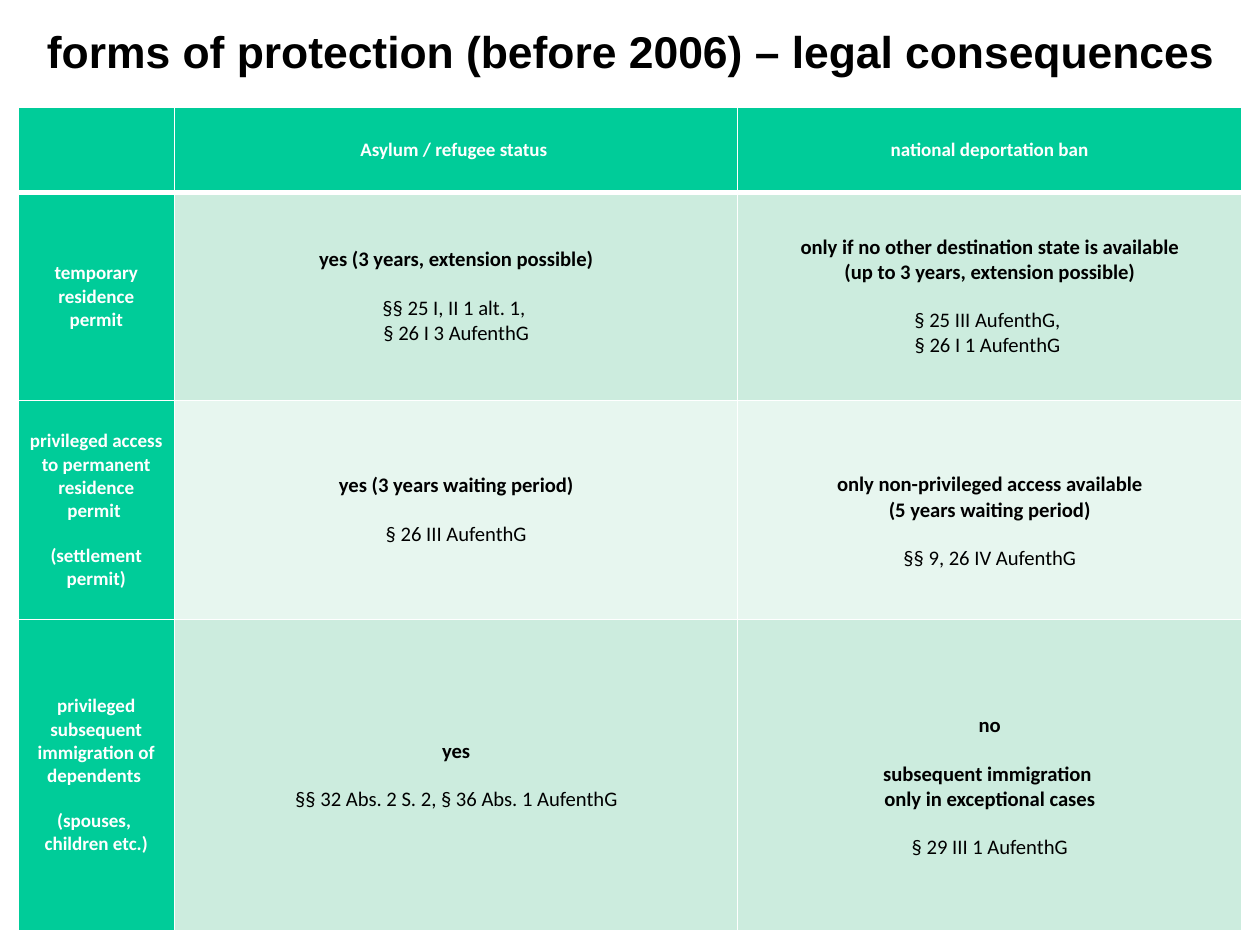
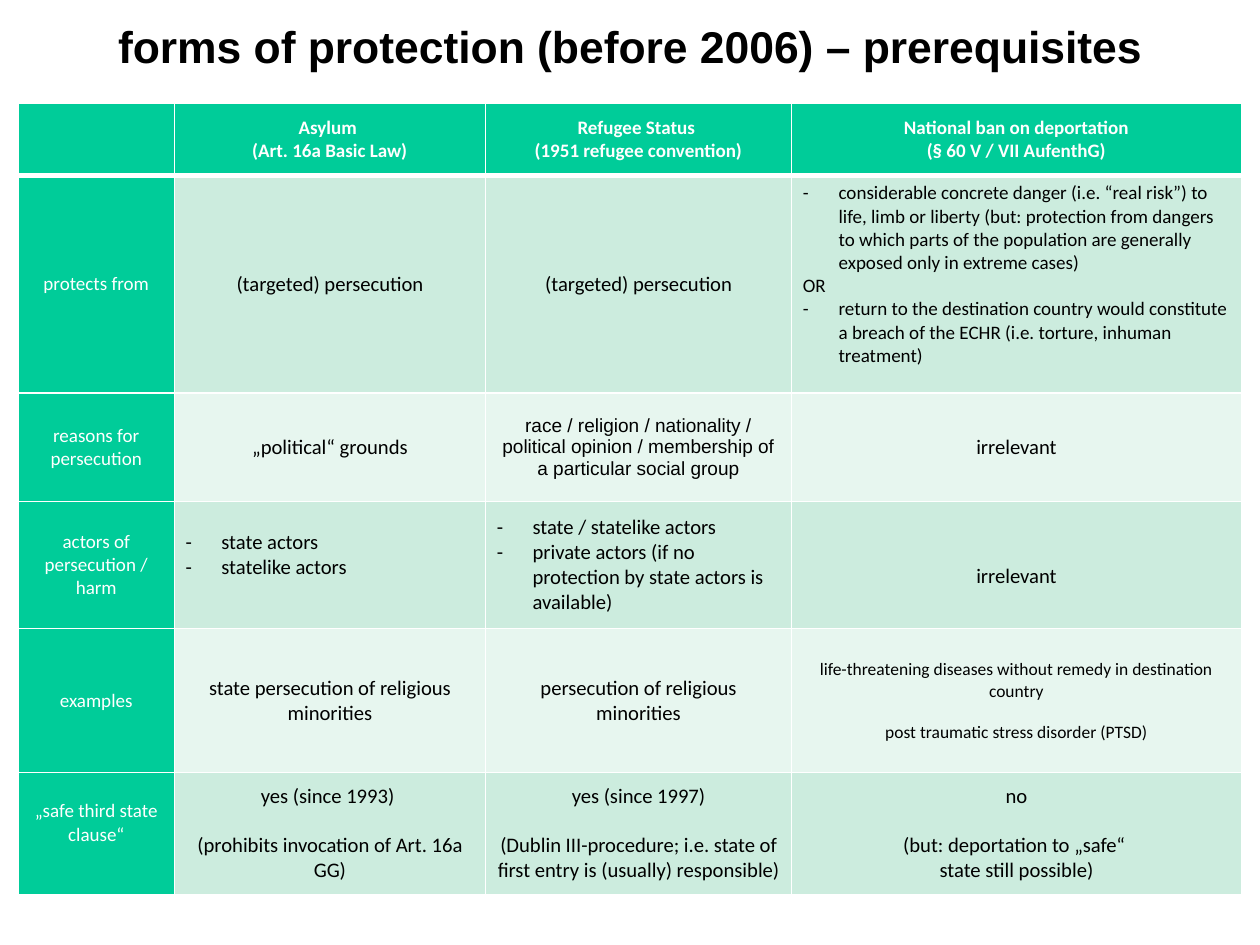
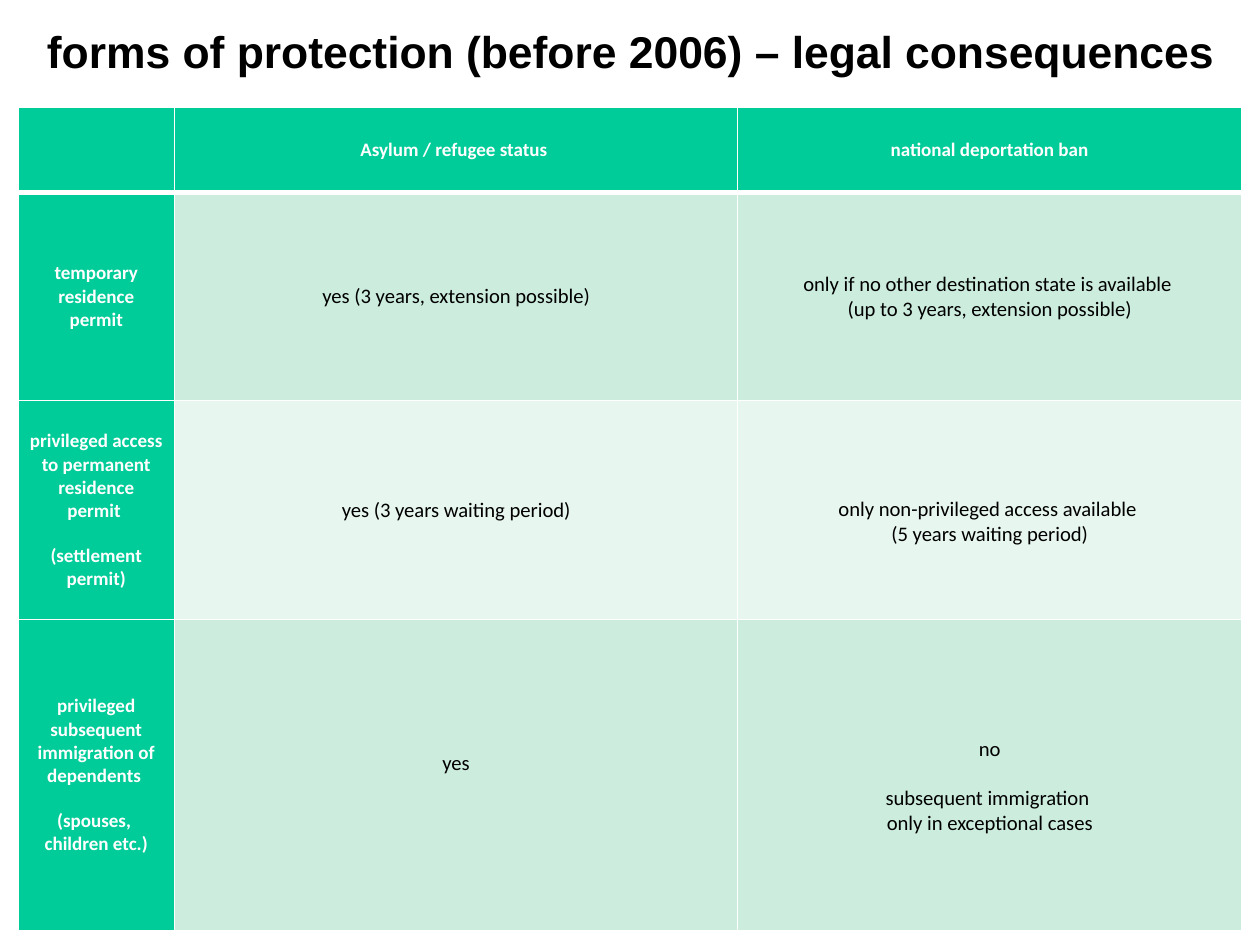
from lxml import etree
from pptx import Presentation
from pptx import util as u
from pptx.dml.color import RGBColor
from pptx.enum import text as t
from pptx.oxml import ns

Pt = u.Pt
HUE = {"head": "00CC99", "odd": "CCECDE", "even": "E7F6EF",
       "white": "FFFFFF", "black": "000000"}
LEFT, WIDE = 11.5, 771.1
BLANK = 1.12


def put(frame, words, size=13, font="Calibri", hue="black", bold=False,
        side="CENTER", after=0):
    gap, first = 0, True
    for line in words.split("\n"):
        if not line:
            gap += size * BLANK
            continue
        par = frame.paragraphs[0] if first else frame.add_paragraph()
        dash, star = line.startswith("- "), line.startswith("*")
        par.alignment = getattr(t.PP_ALIGN, side)
        par.space_before, par.space_after = Pt(gap), Pt(after)
        run = par.add_run()
        run.text = line[2:] if dash else line[1:] if star else line
        run.font.size, run.font.name = Pt(size), font
        run.font.bold = bold or star
        run.font.color.rgb = RGBColor.from_string(HUE[hue])
        if dash:
            prop = par._p.get_or_add_pPr()
            prop.set("marL", str(Pt(22.5)))
            prop.set("indent", str(-Pt(22.5)))
            etree.SubElement(prop, ns.qn("a:buFont")).set("typeface", font)
            etree.SubElement(prop, ns.qn("a:buChar")).set("char", "-")
        gap, first = 0, False


def edge(cell, top, low):
    prop = cell._tc.get_or_add_tcPr()
    for spot, (tag, wide) in enumerate(
            [("lnL", 1), ("lnR", 1), ("lnT", top), ("lnB", low)]):
        line = etree.Element(ns.qn("a:" + tag), w=str(Pt(wide)))
        fill = etree.SubElement(line, ns.qn("a:solidFill"))
        etree.SubElement(fill, ns.qn("a:srgbClr")).set("val", HUE["white"])
        prop.insert(spot, line)


rights = {
    "title": "forms of protection (before 2006) – legal consequences",
    "box": (LEFT, 11.5, WIDE), "top": 67.3, "bold": True,
    "cols": [98.3, 355, 317.2], "rows": [54, 131, 138, 196],
    "head": ["", "Asylum / refugee status ", "national deportation ban"],
    "side": ["temporary residence permit",
             "privileged access to permanent residence permit \n\n(settlement permit)",
             "privileged subsequent immigration of dependents \n\n(spouses, \nchildren etc.)"],
}
full = {**rights, "body": [
    ["*yes (3 years, extension possible)\n\n§§ 25 I, II 1 alt. 1, \n§ 26 I 3 AufenthG",
     "*only if no other destination state is available\n*(up to 3 years, extension possible)"
     "\n\n§ 25 III AufenthG, \n§ 26 I 1 AufenthG "],
    ["*yes (3 years waiting period)\n\n§ 26 III AufenthG",
     ("*only non-privileged access available\n*(5 years waiting period)"
      "\n\n§§ 9, 26 IV AufenthG", {"push": 1})],
    ["*yes\n\n§§ 32 Abs. 2 S. 2, § 36 Abs. 1 AufenthG",
     ("*no\n\n*subsequent immigration \n*only in exceptional cases"
      "\n\n§ 29 III 1 AufenthG", {"push": 1})],
]}
brief = {**rights, "body": [
    ["yes (3 years, extension possible)",
     "only if no other destination state is available \n(up to 3 years, extension possible)"],
    ["yes (3 years waiting period)",
     ("only non-privileged access available \n(5 years waiting period)", {"push": 1})],
    [("yes", {"push": -1}),
     ("no\n\nsubsequent immigration \nonly in exceptional cases", {"push": 1})],
]}
needs = {
    "title": "forms of protection (before 2006) – prerequisites",
    "box": (31, 8.6, 731.5), "top": 65.1, "bold": False,
    "cols": [98.3, 196, 192.8, 283.4],
    "rows": [45.4, 137, 68.4, 80.2, 90.7, 76.7],
    "head": ["", "Asylum \n(Art. 16a Basic Law)",
             "Refugee Status \n(1951 refugee convention)",
             "National ban on deportation\n(§ 60 V / VII AufenthG)"],
    "side": ["protects from", "reasons for persecution",
             "actors of persecution / harm", "examples",
             ("„safe third state clause“", {"push": -1})],
    "body": [
        ["(targeted) persecution", "(targeted) persecution",
         ("- considerable concrete danger (i.e. “real risk”) to life, limb or liberty "
          "(but: protection from dangers to which parts of the population are generally "
          "exposed only in extreme cases)\nOR\n- return to the destination country would "
          "constitute a breach of the ECHR (i.e. torture, inhuman treatment)",
          {"size": 12, "side": "LEFT", "push": -0.9})],
        ["„political“ grounds",
         ("race / religion / nationality / political opinion / membership of "
          "a particular social group", {"size": 12, "font": "Arial"}),
         "irrelevant"],
        [("- state actors\n- statelike actors", {"side": "LEFT", "push": -0.9}),
         ("- state / statelike actors\n- private actors (if no protection by state "
          "actors is available)", {"side": "LEFT"}),
         ("irrelevant", {"push": 1})],
        ["state persecution of religious minorities",
         "persecution of religious minorities",
         ("life-threatening diseases without remedy in destination country"
          "\n\npost traumatic stress disorder (PTSD)", {"size": 11})],
        ["yes (since 1993) \n\n(prohibits invocation of Art. 16a GG)",
         "yes (since 1997)\n\n(Dublin III-procedure; i.e. state of first entry is "
         "(usually) responsible)",
         "no\n\n(but: deportation to „safe“ \nstate still possible)"],
    ],
}

deck = Presentation()
deck.slide_width, deck.slide_height = Pt(793.7), Pt(595.28)

for page in (full, needs, brief):
    slide = deck.slides.add_slide(deck.slide_layouts[5])
    title = slide.shapes.title
    x, y, wide = page["box"]
    title.left, title.top, title.width, title.height = Pt(x), Pt(y), Pt(wide), Pt(41)
    frame = title.text_frame
    frame.word_wrap, frame.auto_size = True, t.MSO_AUTO_SIZE.NONE
    frame.vertical_anchor = t.MSO_ANCHOR.TOP
    put(frame, page["title"], size=28, font="Arial", bold=True, after=14.1)

    cols, rows = page["cols"], page["rows"]
    grid = slide.shapes.add_table(len(rows), len(cols), Pt(LEFT), Pt(page["top"]),
                                  Pt(sum(cols)), Pt(sum(rows))).table
    for col, wide in zip(grid.columns, cols):
        col.width = Pt(wide)
    for row, high in zip(grid.rows, rows):
        row.height = Pt(high)

    lines = [page["head"]] + [[a] + b for a, b in zip(page["side"], page["body"])]
    for r, line in enumerate(lines):
        for c, item in enumerate(line):
            words, more = (item, {}) if isinstance(item, str) else item
            look = {"size": 13}
            if r == 0 or c == 0:
                look = {"size": 12, "hue": "white", "bold": r == 0 or page["bold"]}
            look.update(more)
            push = look.pop("push", 0) * look["size"] * BLANK
            cell = grid.cell(r, c)
            cell.vertical_anchor = t.MSO_ANCHOR.MIDDLE
            cell.margin_left = cell.margin_right = Pt(7.2)
            cell.margin_top = Pt(3.6 + max(push, 0))
            cell.margin_bottom = Pt(3.6 + max(-push, 0))
            tone = "head" if r == 0 or c == 0 else "odd" if r % 2 else "even"
            cell.fill.solid()
            cell.fill.fore_color.rgb = RGBColor.from_string(HUE[tone])
            edge(cell, 3 if r == 1 else 1, 3 if r == 0 else 1)
            put(cell.text_frame, words, **look)

deck.save("out.pptx")
